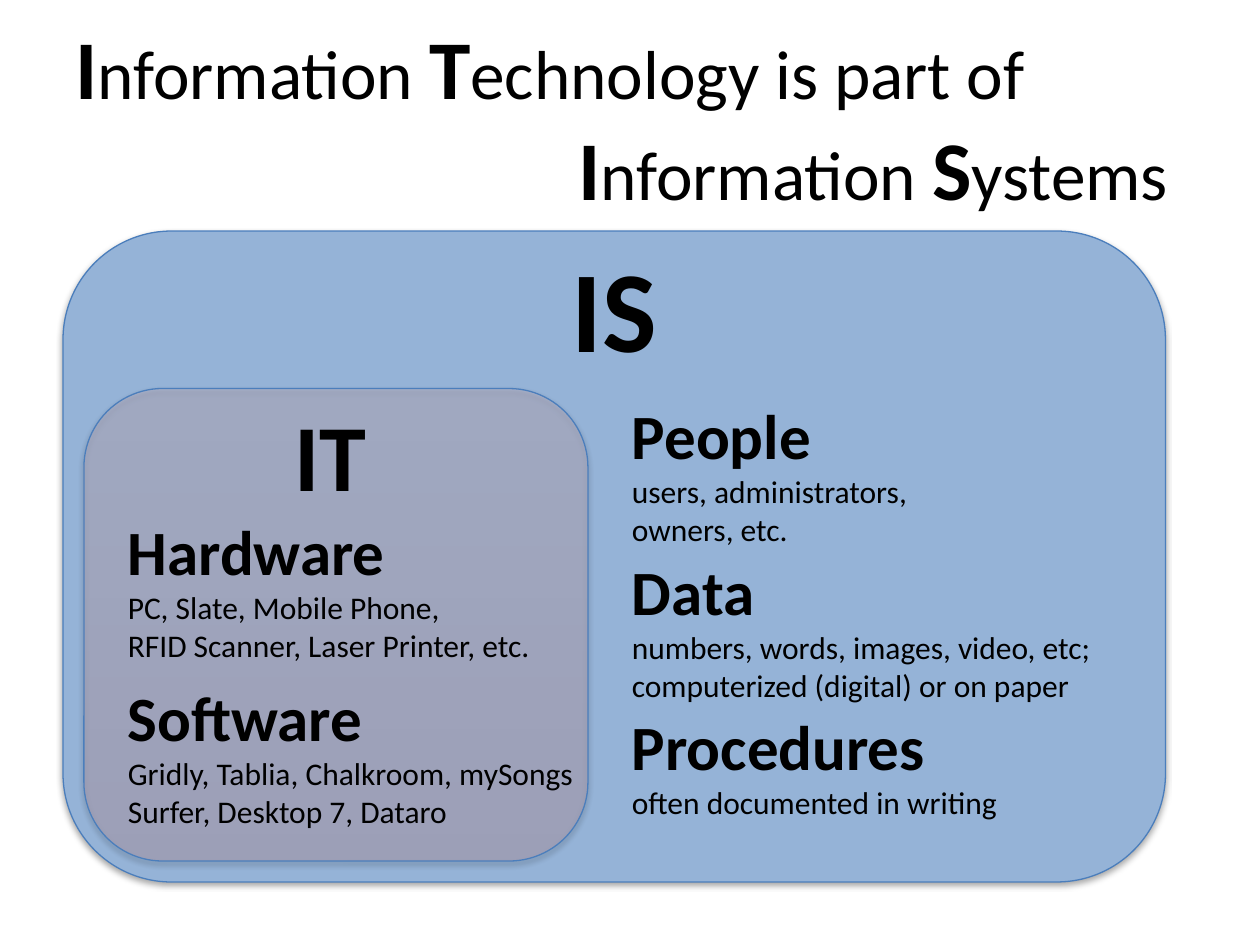
from lxml import etree
from pptx import Presentation
from pptx import util as u
from pptx.dml.color import RGBColor
from pptx.enum import shapes, text
from pptx.oxml import parse_xml
from pptx.oxml.ns import nsdecls, qn

THEME = {
    "font": "Calibri", "ink": "000000", "line": "4B7EBC", "system": "95B3D7",
    "tech": ("D99694", "E6B9B8"), "tech_alpha": "25000",
    "cap": 47.7, "title": 39.6, "is": 66, "it": 54, "head": 36, "body": 18,
}
SHADOW = (
    f'<a:effectLst {nsdecls("a")}><a:outerShdw blurRad="{u.Pt(3.1)}" dist="{u.Pt(1.8)}" '
    'dir="5400000" rotWithShape="0"><a:srgbClr val="000000"><a:alpha val="35000"/>'
    '</a:srgbClr></a:outerShdw></a:effectLst>'
)
LEFT, CENTER, RIGHT = text.PP_ALIGN.LEFT, text.PP_ALIGN.CENTER, text.PP_ALIGN.RIGHT

prs = Presentation()
prs.slide_width, prs.slide_height = u.Inches(10), u.Inches(7.5)
s = prs.slides.add_slide(prs.slide_layouts[6])
COL, ROW = prs.slide_width / 120, prs.slide_height / 90


def cells(x, y, w, h):
    return int(x * COL), int(y * ROW), int(w * COL), int(h * ROW)


def write(p, runs, align=LEFT):
    p.alignment = align
    p.font.name = THEME["font"]
    p.font.color.rgb = RGBColor.from_string(THEME["ink"])
    for words, size, bold in runs:
        for i, line in enumerate(words.split("\n")):
            if i:
                p.add_line_break()
            if line:
                r = p.add_run()
                r.text = line
                r.font.size, r.font.bold = u.Pt(THEME[size]), bold


panels = []
for grid in [(6, 22, 105, 62), (8, 37, 48, 45)]:
    sp = s.shapes.add_shape(shapes.MSO_SHAPE.ROUNDED_RECTANGLE, *cells(*grid))
    sp.line.color.rgb = RGBColor.from_string(THEME["line"])
    sp.line.width = u.Pt(0.75)
    panels.append(sp)

system, tech = panels
system.fill.solid()
system.fill.fore_color.rgb = RGBColor.from_string(THEME["system"])
tech.fill.gradient()
tech.fill.gradient_angle = 90
for stop, color in zip(tech.fill.gradient_stops, THEME["tech"]):
    stop.color.rgb = RGBColor.from_string(color)
for color in tech.element.findall(".//" + qn("a:gs") + "/" + qn("a:srgbClr")):
    etree.SubElement(color, qn("a:alpha"), val=THEME["tech_alpha"])
for sp in panels:
    sp.element.spPr.append(parse_xml(SHADOW))

title = s.shapes.add_textbox(*cells(6, 3.6, 108, 15))
tf = title.text_frame
tf.word_wrap = True
tf.vertical_anchor = text.MSO_ANCHOR.MIDDLE
tf.margin_right = u.Inches(0.23)
write(tf.paragraphs[0], [("I", "cap", True), ("nformation ", "title", False),
                         ("T", "cap", True), ("echnology is part of", "title", False)])
write(tf.add_paragraph(), [("I", "cap", True), ("nformation ", "title", False),
                           ("S", "cap", True), ("ystems", "title", False)], RIGHT)

parts = [
    (59, 37.2, 33, "People", "users, administrators, owners, etc."),
    (59, 66.8, 55, "Procedures", "often documented in writing"),
    (59, 52, 55, "Data", "numbers, words, images, video, etc;\ncomputerized (digital) or on paper"),
    (11, 48.2, 55, "Hardware", "PC, Slate, Mobile Phone,\nRFID Scanner, Laser Printer, etc."),
    (11, 64, 55, "Software", "Gridly, Tablia, Chalkroom, mySongs\nSurfer, Desktop 7, Dataro"),
]
boxes = [((x, y, w, 15.7), [(head + "\n", "head", True), (body, "body", False)], LEFT)
         for x, y, w, head, body in parts]
boxes += [((15, 37.2, 33, 12.1), [("IT", "it", True)], CENTER),
          ((15, 22, 87, 14.5), [("IS", "is", True)], CENTER)]
for grid, runs, align in boxes:
    tf = s.shapes.add_textbox(*cells(*grid)).text_frame
    tf.word_wrap = True
    tf.auto_size = text.MSO_AUTO_SIZE.SHAPE_TO_FIT_TEXT
    write(tf.paragraphs[0], runs, align)

prs.save("out.pptx")
